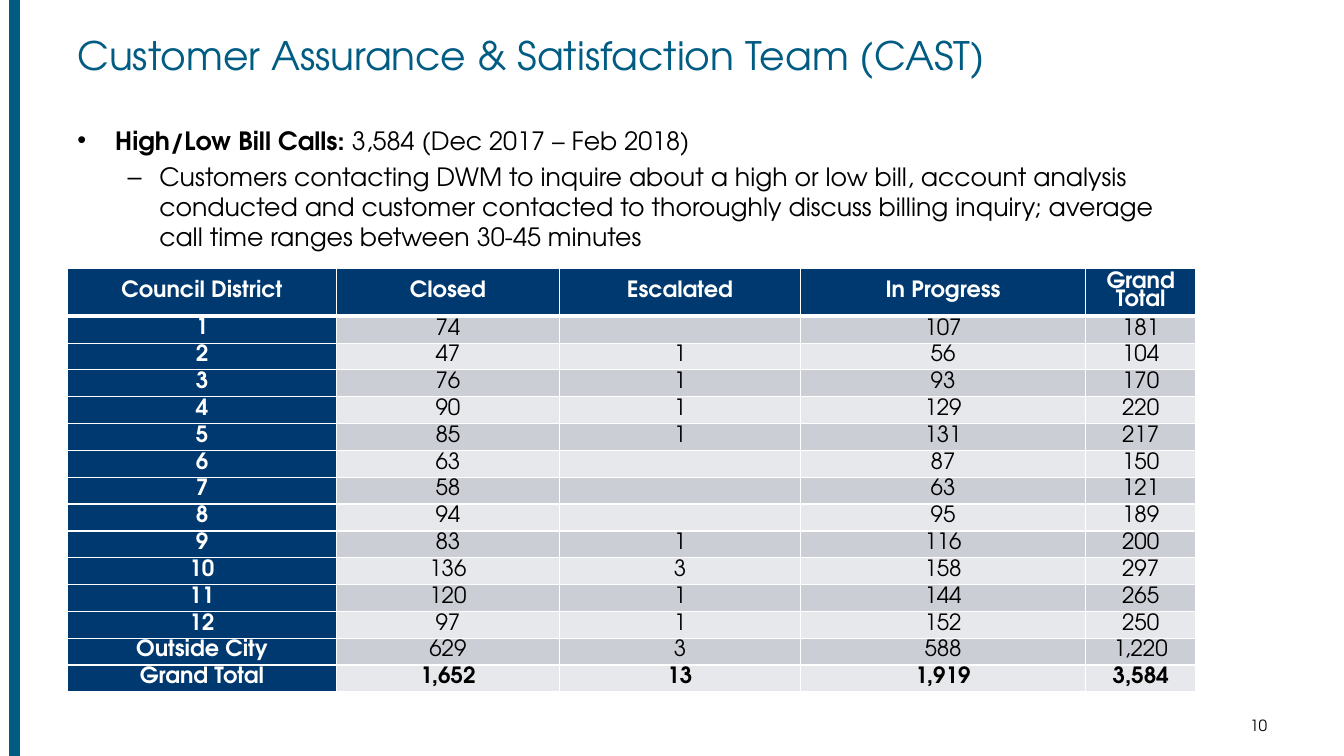
from lxml import etree
from pptx import Presentation
from pptx.dml.color import RGBColor
from pptx.enum.shapes import MSO_CONNECTOR
from pptx.enum.text import MSO_ANCHOR, PP_ALIGN
from pptx.oxml.ns import qn
from pptx.util import Pt

STRAIGHT = MSO_CONNECTOR.STRAIGHT
TOP, MIDDLE = MSO_ANCHOR.TOP, MSO_ANCHOR.MIDDLE
LEFT, CENTER, RIGHT = PP_ALIGN.LEFT, PP_ALIGN.CENTER, PP_ALIGN.RIGHT

TEAL, NAVY, BLACK, WHITE = "005C82", "00396F", "000000", "FFFFFF"
BANDS = ("CCCED5", "E7E8EB")

HEADINGS = ["Council District", "Closed", "Escalated", "In Progress", "Grand Total"]
CALLS = [
    ["1", "74", "", "107", "181"],
    ["2", "47", "1", "56", "104"],
    ["3", "76", "1", "93", "170"],
    ["4", "90", "1", "129", "220"],
    ["5", "85", "1", "131", "217"],
    ["6", "63", "", "87", "150"],
    ["7", "58", "", "63", "121"],
    ["8", "94", "", "95", "189"],
    ["9", "83", "1", "116", "200"],
    ["10", "136", "3", "158", "297"],
    ["11", "120", "1", "144", "265"],
    ["12", "97", "1", "152", "250"],
    ["Outside City", "629", "3", "588", "1,220"],
    ["Grand Total", "1,652", "13", "1,919", "3,584"],
]
COLUMN_WIDTHS = [192.2, 159.2, 172.3, 203.6, 78.7]
HEADER_HEIGHT, ROW_HEIGHT = 33.9, 19.15


def color(value):
    return RGBColor.from_string(value)


class SlideBuilder:
    def __init__(self, page, font):
        self.page = page
        self.font = font

    def span(self, para, text, size, ink, bold=False):
        span = para.add_run()
        span.text = text
        span.font.name = self.font
        span.font.size = Pt(size)
        span.font.bold = bold
        span.font.color.rgb = color(ink)

    def textbox(self, left, top, width, height, anchor=TOP):
        box = self.page.shapes.add_textbox(Pt(left), Pt(top), Pt(width), Pt(height))
        frame = box.text_frame
        frame.word_wrap = True
        frame.vertical_anchor = anchor
        return frame

    def label(self, area, text, size, ink, align=LEFT, anchor=TOP):
        para = self.textbox(*area, anchor).paragraphs[0]
        para.alignment = align
        self.span(para, text, size, ink)

    def bullet(self, para, symbol, margin, hanging):
        properties = para._p.get_or_add_pPr()
        properties.set("marL", str(Pt(margin)))
        properties.set("indent", str(-Pt(hanging)))
        etree.SubElement(properties, qn("a:buFont"), typeface="Arial")
        etree.SubElement(properties, qn("a:buChar"), char=symbol)

    def line(self, start, end, ink, width):
        line = self.page.shapes.add_connector(STRAIGHT, *map(Pt, start + end))
        line.line.color.rgb = color(ink)
        line.line.width = Pt(width)
        etree.SubElement(line._element.spPr, qn("a:effectLst"))

    def border(self, cell, side, ink, width):
        edge = etree.SubElement(cell._tc.get_or_add_tcPr(), qn("a:ln" + side), w=str(Pt(width)))
        fill = etree.SubElement(edge, qn("a:solidFill"))
        etree.SubElement(fill, qn("a:srgbClr"), val=ink)

    def cell(self, cell, text, fill, ink, bold, top_line, bottom_line):
        for side, width in (("L", 1), ("R", 1), ("T", top_line), ("B", bottom_line)):
            self.border(cell, side, WHITE, width)
        cell.fill.solid()
        cell.fill.fore_color.rgb = color(fill)
        cell.margin_left = cell.margin_right = Pt(5)
        cell.margin_top = cell.margin_bottom = Pt(0)
        cell.vertical_anchor = MIDDLE
        para = cell.text_frame.paragraphs[0]
        para.alignment = CENTER
        para.line_spacing = 0.86
        if text:
            self.span(para, text, 16, ink, bold)
        else:
            # An empty cell keeps the text size so its row does not grow
            etree.SubElement(para._p, qn("a:endParaRPr"), sz="1600")

    def table(self, left, top, rows, widths, heights):
        frame = self.page.shapes.add_table(
            len(rows), len(widths), Pt(left), Pt(top), Pt(sum(widths)), Pt(sum(heights)))
        table = frame.table
        table.first_row = table.horz_banding = False
        for column, width in zip(table.columns, widths):
            column.width = Pt(width)
        for row, height in zip(table.rows, heights):
            row.height = Pt(height)
        last = len(rows) - 1
        for r, values in enumerate(rows):
            for c, text in enumerate(values):
                heading = r == 0 or c == 0
                self.cell(
                    table.cell(r, c), text,
                    NAVY if heading else BANDS[(r - 1) % 2],
                    WHITE if heading else BLACK,
                    heading or r == last,
                    3 if r == 1 else 1, 3 if r == 0 else 1)


def main():
    deck = Presentation()
    deck.slide_width, deck.slide_height = Pt(960), Pt(540)
    page = deck.slides.add_slide(deck.slide_layouts[6])
    builder = SlideBuilder(page, "TeX Gyre Adventor")

    # Page number and side stripe
    builder.label((723.6, 510.5, 188.6, 15), "10", 11, BLACK, RIGHT, MIDDLE)
    builder.line((10.4, 0), (10.4, 540), TEAL, 8)

    # Title
    builder.label((48.2, 18.7, 816, 47.5), "Customer Assurance & Satisfaction Team (CAST)", 28, TEAL)

    # Summary of calls
    body = builder.textbox(48.2, 85.8, 806, 97)
    para = body.paragraphs[0]
    builder.bullet(para, "•", 27, 27)
    builder.span(para, "High/Low Bill Calls: ", 18, BLACK, True)
    builder.span(para, "3,584 (Dec 2017 – Feb 2018)", 18, BLACK)
    para = body.add_paragraph()
    para.level = 1
    para.space_before = Pt(4.3)
    builder.bullet(para, "–", 58.5, 22.5)
    builder.span(
        para,
        "Customers contacting DWM to inquire about a high or low bill, account analysis "
        "conducted and customer contacted to thoroughly discuss billing inquiry; average "
        "call time ranges between 30-45 minutes", 18, BLACK)

    # Calls by council district
    heights = [HEADER_HEIGHT] + [ROW_HEIGHT] * len(CALLS)
    builder.table(48.2, 192, [HEADINGS] + CALLS, COLUMN_WIDTHS, heights)

    deck.save("out.pptx")


if __name__ == "__main__":
    main()
